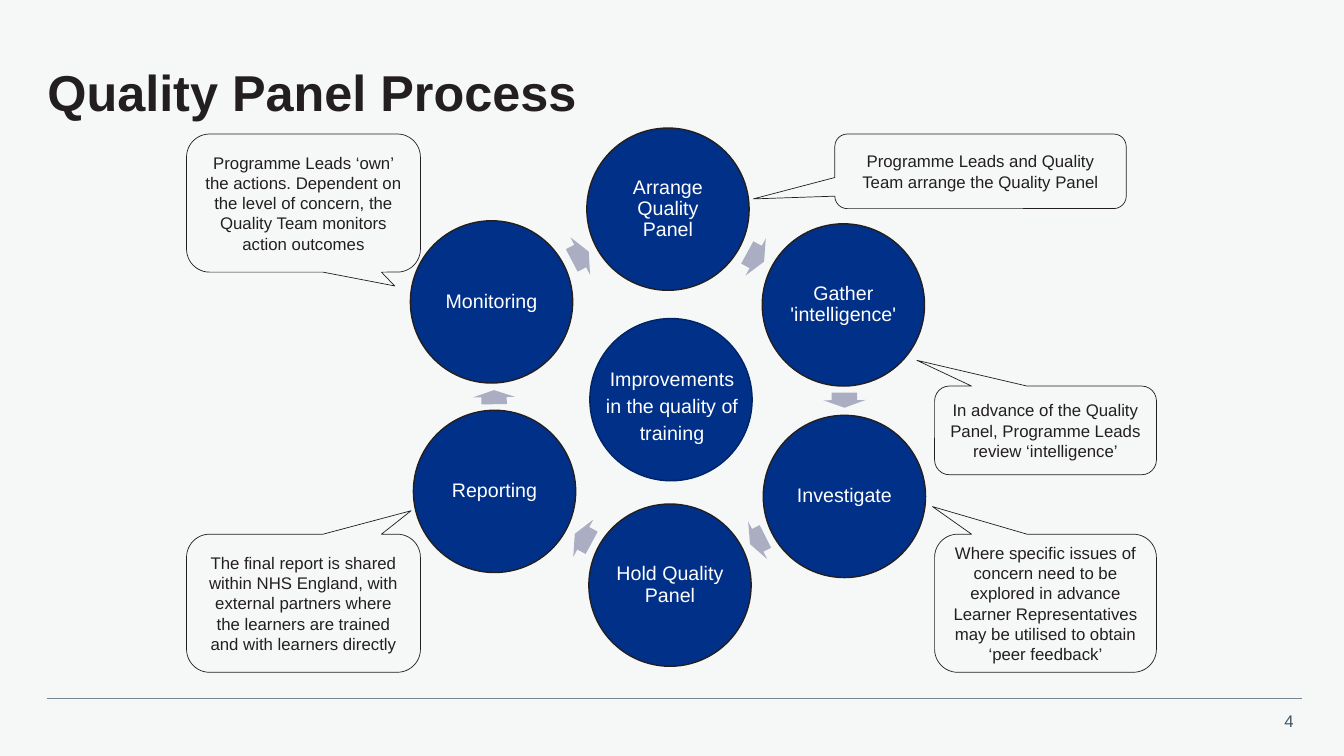
from lxml import etree
from pptx import Presentation
from pptx.dml.color import RGBColor
from pptx.enum.shapes import MSO_CONNECTOR, MSO_SHAPE
from pptx.enum.text import MSO_ANCHOR, PP_ALIGN
from pptx.oxml.ns import qn
from pptx.util import Inches, Pt

OVAL = MSO_SHAPE.OVAL
ARROW = MSO_SHAPE.RIGHT_ARROW
CALLOUT = MSO_SHAPE.ROUNDED_RECTANGULAR_CALLOUT
STRAIGHT = MSO_CONNECTOR.STRAIGHT
TOP, MIDDLE = MSO_ANCHOR.TOP, MSO_ANCHOR.MIDDLE
LEFT, CENTER, RIGHT = PP_ALIGN.LEFT, PP_ALIGN.CENTER, PP_ALIGN.RIGHT

PALE = RGBColor(0xF6, 0xF8, 0xF8)
INK = RGBColor(0x23, 0x1F, 0x20)
BLUE = RGBColor(0x00, 0x30, 0x87)
DARK_BLUE = RGBColor(0x00, 0x24, 0x64)
LILAC = RGBColor(0xAB, 0xAE, 0xC3)
SLATE = RGBColor(0x42, 0x55, 0x63)
RULE_GREY = RGBColor(0x76, 0x86, 0x92)
WHITE = RGBColor(0xFF, 0xFF, 0xFF)

TITLE = "Quality Panel Process"
PAGE_NUMBER = "4"
GOAL = "Improvements in the quality of training"
DIAMETER = 1.61
ARROW_HEIGHT = 0.42

STEPS = [
    ("Arrange Quality Panel", 5.82, 1.27),
    ("Gather 'intelligence'", 7.56, 2.22),
    ("Investigate", 7.57, 4.12),
    ("Hold Quality Panel", 5.84, 5.0),
    ("Reporting", 4.1, 4.07),
    ("Monitoring", 4.07, 2.19),
]
ARROWS = [
    (7.4, 2.34, 0.19, 28.6),
    (8.3, 3.76, 0.15, 89.6),
    (7.43, 5.15, 0.17, 153.2),
    (5.69, 5.13, 0.19, 208.2),
    (4.83, 3.73, 0.14, 269.2),
    (5.66, 2.33, 0.19, 332.3),
]
CALLOUTS = [
    ("Programme Leads and Quality Team arrange the Quality Panel",
     (8.28, 1.33, 2.89, 0.74), (-0.78, 0.37)),
    ("In advance of the Quality Panel, Programme Leads review ‘intelligence’",
     (9.27, 3.83, 2.2, 0.88), (-0.58, -0.79)),
    ("The final report is shared within NHS England, with external partners "
     "where the learners are trained and with learners directly",
     (1.85, 5.3, 2.32, 1.37), (0.46, -0.67)),
    ("Programme Leads ‘own’ the actions. Dependent on the level of concern, "
     "the Quality Team monitors action outcomes",
     (1.85, 1.33, 2.32, 1.37), (0.39, 0.6)),
    ("Where specific issues of concern need to be explored in advance Learner "
     "Representatives may be utilised to obtain ‘peer feedback’",
     (9.27, 5.3, 2.2, 1.37), (-0.51, -0.7)),
]


def write(shape, text, size, color, align=CENTER, anchor=MIDDLE,
          spacing=1.0, inset=None, bold=False, wrap=True):
    frame = shape.text_frame
    frame.word_wrap = wrap
    frame.vertical_anchor = anchor
    if inset is not None:
        frame.margin_left = frame.margin_right = Inches(inset)
        frame.margin_top = frame.margin_bottom = Inches(inset)
    paragraph = frame.paragraphs[0]
    paragraph.text = text
    paragraph.alignment = align
    paragraph.line_spacing = spacing
    paragraph.font.name = "Arial"
    paragraph.font.size = Pt(size)
    paragraph.font.bold = bold
    paragraph.font.color.rgb = color


def add_text(slide, box, *args, **options):
    write(slide.shapes.add_textbox(*map(Inches, box)), *args, **options)


def add_shape(slide, kind, box, fill=None, line=None, line_width=1):
    shape = slide.shapes.add_shape(kind, *map(Inches, box))
    shape.shadow.inherit = False
    if fill is None:
        shape.fill.background()
    else:
        shape.fill.solid()
        shape.fill.fore_color.rgb = fill
    if line is None:
        shape.line.fill.background()
    else:
        shape.line.color.rgb = line
        shape.line.width = Pt(line_width)
    return shape


def add_frame(slide):
    slide.background.fill.solid()
    slide.background.fill.fore_color.rgb = PALE
    add_text(slide, (12.52, 7, 0.41, 0.3), PAGE_NUMBER, 12, SLATE,
             align=RIGHT, anchor=TOP, wrap=False)
    rule = slide.shapes.add_connector(
        STRAIGHT, Inches(0.47), Inches(6.93), Inches(12.91), Inches(6.93))
    rule.line.color.rgb = RULE_GREY
    rule.line.width = Pt(0.5)
    etree.SubElement(rule._element.spPr, qn("a:effectLst"))
    add_text(slide, (0.47, 0.47, 12.47, 0.95), TITLE, 36, INK,
             align=LEFT, spacing=0.9, inset=0, bold=True)


def add_cycle(slide):
    for (label, left, top), (x, y, width, angle) in zip(STEPS, ARROWS):
        circle = add_shape(slide, OVAL, (left, top, DIAMETER, DIAMETER), BLUE, INK)
        write(circle, label, 14, WHITE, spacing=0.9, inset=0.02)
        arrow = add_shape(slide, ARROW, (x, y, width, ARROW_HEIGHT), LILAC)
        arrow.adjustments[0] = 0.6
        arrow.adjustments[1] = 0.5
        arrow.rotation = angle
    add_shape(slide, OVAL, (5.85, 3.16, DIAMETER, DIAMETER), BLUE, DARK_BLUE)
    add_text(slide, (5.89, 3.56, 1.55, 0.92), GOAL, 14, WHITE,
             anchor=TOP, spacing=1.15)


def add_callouts(slide):
    for text, box, tip in CALLOUTS:
        callout = add_shape(slide, CALLOUT, box, line=INK, line_width=0.5)
        callout.adjustments[0], callout.adjustments[1] = tip
        write(callout, text, 12, INK)


def main():
    presentation = Presentation()
    presentation.slide_width = Inches(13.33)
    presentation.slide_height = Inches(7.5)
    slide = presentation.slides.add_slide(presentation.slide_layouts[6])
    add_frame(slide)
    add_cycle(slide)
    add_callouts(slide)
    presentation.save("out.pptx")


if __name__ == "__main__":
    main()
